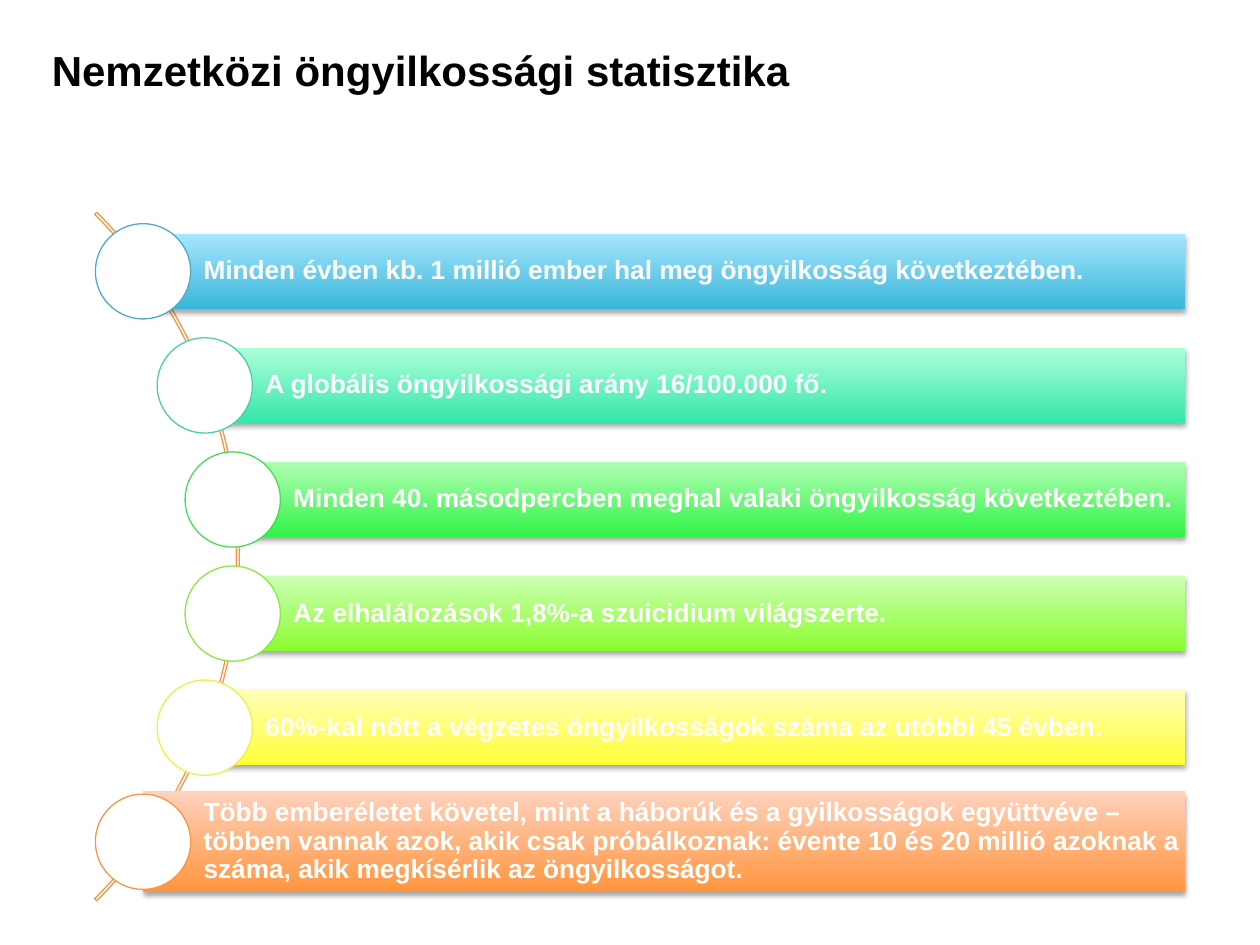
from dataclasses import dataclass
from math import sqrt

from lxml.etree import SubElement
from pptx import Presentation
from pptx.dml.color import RGBColor
from pptx.enum.shapes import MSO_SHAPE as Kind
from pptx.enum.text import MSO_ANCHOR as Anchor, PP_ALIGN as Align
from pptx.oxml.ns import qn
from pptx.util import Cm, Pt

# Arc and row rules, in cm
ARC_X, ARC_Y, ARC_SIZE = -4.99, 11.22, 19.63
RADIUS = 9.75  # the dots sit on this circle
STEP = 2.3
DOT = 1.92
RIGHT = 23.89


@dataclass
class Row:
    runs: list[tuple[str, str]]
    dark: str
    light: str
    edge: str
    height: float = 1.52


ROWS = [
    Row([("Minden évben kb. 1 millió ember hal meg öngyilkosság következtében.", "Arial")],
        "39B7D8", "A7E6FF", "4BACC6"),
    Row([("A globális öngyilkossági arány 16/100.000 fő", "Arial"), (".", "Calibri")],
        "34E6A9", "ACFFD9", "49D1A3"),
    Row([("Minden 40. másodpercben meghal valaki öngyilkosság következtében.", "Arial")],
        "31F245", "B0FFB4", "47DC57"),
    Row([("Az elhalálozások 1,8%-a szuicidium világszerte.", "Arial")],
        "8AFD2E", "CCFFB4", "8DE646"),
    Row([("60%-kal nőtt a végzetes öngyilkosságok száma az utóbbi 45 évben", "Arial"),
         (".", "Calibri")],
        "FEFF35", "FFFFB9", "EEEF46"),
    Row([("Több emberéletet követel, mint a háborúk és a gyilkosságok együttvéve –"
          "többen vannak azok, akik csak próbálkoznak: évente 10 és 20 millió azoknak a "
          "száma, akik megkísérlik az öngyilkosságot.", "Arial")],
        "FF953E", "FFD2BD", "F79646", 2.03),
]


def color(code: str) -> RGBColor:
    return RGBColor.from_string(code)


def add_run(para, text: str, face: str, size: float, code: str) -> None:
    run = para.add_run()
    run.text = text
    font = run.font
    font.name, font.size, font.bold = face, Pt(size), True
    font.color.rgb = color(code)


def add_shape(slide, kind, left: float, top: float, width: float, height: float):
    shape = slide.shapes.add_shape(kind, Cm(left), Cm(top), Cm(width), Cm(height))
    shape.shadow.inherit = False
    return shape


def outline(shape, code: str) -> None:
    shape.line.color.rgb = color(code)
    shape.line.width = Pt(0.75)


def drop_shadow(shape) -> None:
    effects = shape.element.spPr.find(qn("a:effectLst"))
    shadow = SubElement(effects, qn("a:outerShdw"), blurRad=str(Pt(3.1)),
                        dist=str(Pt(1.8)), dir="5400000", rotWithShape="0")
    tint = SubElement(shadow, qn("a:srgbClr"), val="000000")
    SubElement(tint, qn("a:alpha"), val="35000")


def add_title(slide, text: str) -> None:
    title = slide.shapes.title
    title.left, title.top, title.width, title.height = Cm(0.79), Cm(0.76), Cm(22.86), Cm(3.18)
    frame = title.text_frame
    frame.vertical_anchor = Anchor.TOP
    para = frame.paragraphs[0]
    para.alignment = Align.LEFT
    add_run(para, text, "Arial", 24, "000000")


def add_arc(slide) -> None:
    half = ARC_SIZE / 2
    arc = add_shape(slide, Kind.BLOCK_ARC, ARC_X - half, ARC_Y - half, ARC_SIZE, ARC_SIZE)
    for i, value in enumerate((189, 27, 0.003)):
        arc.adjustments[i] = value
    arc.fill.background()
    outline(arc, "F79646")


def add_bar(slide, row: Row, x: float, y: float) -> None:
    bar = add_shape(slide, Kind.RECTANGLE, x, y - row.height / 2, RIGHT - x, row.height)
    bar.fill.gradient()
    bar.fill.gradient_angle = 90
    for stop, code in zip(bar.fill.gradient_stops, (row.dark, row.light)):
        stop.color.rgb = color(code)
    bar.line.fill.background()
    drop_shadow(bar)

    frame = bar.text_frame
    frame.word_wrap = True
    frame.vertical_anchor = Anchor.MIDDLE
    frame.margin_left = Cm(1.22)
    frame.margin_top = frame.margin_right = frame.margin_bottom = Cm(0.1)
    para = frame.paragraphs[0]
    para.alignment = Align.LEFT
    para.line_spacing = 0.9
    for text, face in row.runs:
        add_run(para, text, face, 15, "FFFFFF")


def add_dot(slide, row: Row, x: float, y: float) -> None:
    dot = add_shape(slide, Kind.OVAL, x - DOT / 2, y - DOT / 2, DOT, DOT)
    dot.fill.solid()
    dot.fill.fore_color.rgb = color("FFFFFF")
    outline(dot, row.edge)


def main() -> None:
    deck = Presentation()
    deck.slide_width, deck.slide_height = Cm(25.4), Cm(19.05)
    slide = deck.slides.add_slide(deck.slide_layouts[5])
    add_title(slide, "Nemzetközi öngyilkossági statisztika")
    add_arc(slide)

    # Rows spread evenly about the arc's centre
    for i, row in enumerate(ROWS):
        rise = (i - (len(ROWS) - 1) / 2) * STEP
        x, y = ARC_X + sqrt(RADIUS ** 2 - rise ** 2), ARC_Y + rise
        add_bar(slide, row, x, y)
        add_dot(slide, row, x, y)

    deck.save("out.pptx")


if __name__ == "__main__":
    main()
